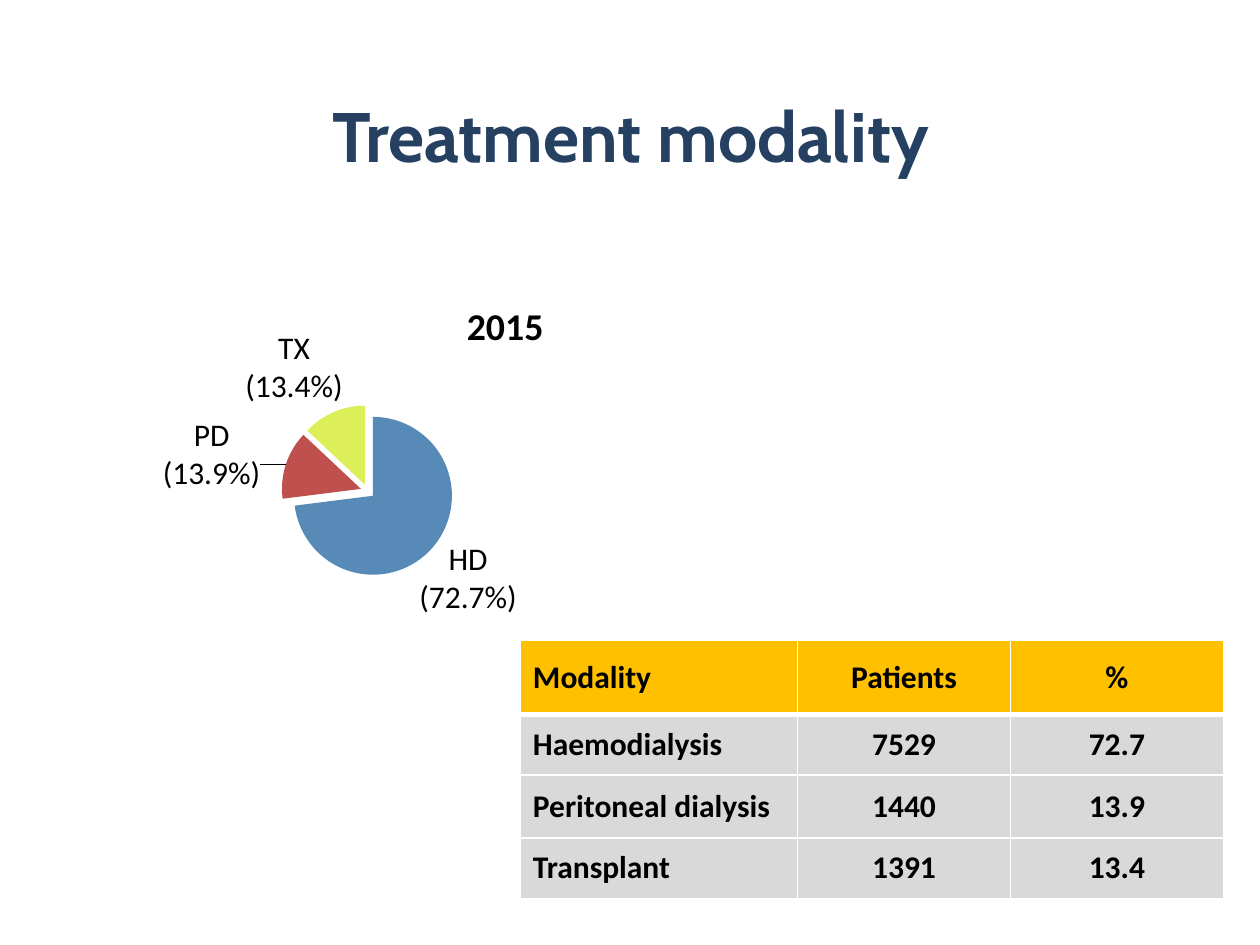
from dataclasses import dataclass

from lxml import etree
from pptx import Presentation
from pptx import util as u
from pptx.chart.data import CategoryChartData
from pptx.dml.color import RGBColor
from pptx.enum import chart as ch, text
from pptx.oxml import parse_xml
from pptx.oxml.ns import nsdecls, qn


@dataclass(frozen=True)
class Theme:
    """Colours, fonts and type sizes of the slide."""
    navy: str = "254061"
    ink: str = "000000"
    line: str = "FFFFFF"
    head: str = "FFC000"
    body: str = "D9D9D9"
    pie: tuple = ("578AB7", "C0504D", "DCEF59")
    title_font: str = "Cabin"
    font: str = "Calibri"
    title: int = 40
    label: float = 21.6
    base: int = 18


T = Theme()
LEFT, MID = text.PP_ALIGN.LEFT, text.PP_ALIGN.CENTER


def style(font, size=T.base, color=T.ink, name=T.font, bold=False):
    """Set size, colour, face and weight of a font."""
    font.size, font.name, font.bold = u.Pt(size), name, bold
    font.color.rgb = RGBColor.from_string(color)


def write(frame, words, align=LEFT, **look):
    """Put one formatted line of text in a frame."""
    para = frame.paragraphs[0]
    para.alignment = align
    run = para.add_run()
    run.text = words
    style(run.font, **look)


def layout(node, after="c:tx", edge=True, **parts):
    """Place a chart part by fractions of the chart's size."""
    spot = node.find(qn("c:layout"))
    if spot is None:
        spot = parse_xml(f"<c:layout {nsdecls('c')}/>")
        first = node.find(qn(after))
        node.insert(0 if first is None else node.index(first) + 1, spot)
    hand = etree.SubElement(spot, qn("c:manualLayout"))
    if "w" in parts:
        etree.SubElement(hand, qn("c:layoutTarget")).set("val", "inner")
    for key in ("x", "y") if edge else ():
        etree.SubElement(hand, qn(f"c:{key}Mode")).set("val", "edge")
    for key, val in parts.items():
        etree.SubElement(hand, qn(f"c:{key}")).set("val", str(val))


def border(cell, **sides):
    """Draw the named cell sides in the given point widths."""
    props = cell._tc.get_or_add_tcPr()
    for spot, (side, width) in enumerate(sides.items()):
        props.insert(spot, parse_xml(
            f'<a:ln{side} {nsdecls("a")} w="{u.Pt(width)}"><a:solidFill>'
            f'<a:srgbClr val="{T.line}"/></a:solidFill></a:ln{side}>'))


def add_title(slide, box, words):
    """Add the slide title centred in its box."""
    frame = slide.shapes.add_textbox(*map(u.Inches, box)).text_frame
    frame.word_wrap = True
    frame.vertical_anchor = text.MSO_ANCHOR.MIDDLE
    write(frame, words, MID, size=T.title, color=T.navy,
          name=T.title_font, bold=True)


def add_label(point, shift):
    """Show the category beside a slice, shifted from its usual place."""
    label = point.data_label
    style(label.font)
    label.position = ch.XL_LABEL_POSITION.OUTSIDE_END
    node = label._dLbl
    for key, val in (("showVal", "0"), ("showCatName", "1"),
                     ("showPercent", "0")):
        node.find(qn(f"c:{key}")).set("val", val)
    layout(node, after="c:idx", edge=False, x=shift[0], y=shift[1])


def add_pie(slide, box, name, shares, shifts):
    """Add the exploded pie with a category label at each slice."""
    data = CategoryChartData()
    data.categories = list(shares)
    data.add_series(name, shares.values())
    chart = slide.shapes.add_chart(
        ch.XL_CHART_TYPE.PIE, *map(u.Inches, box), data).chart
    style(chart.font)
    chart.has_legend = False
    chart.has_title = True
    write(chart.chart_title.text_frame, name, MID, size=T.label, bold=True)
    chart.chart_title.include_in_layout = False
    layout(chart.chart_title._element, x=0.66, y=0.16)
    layout(chart._chartSpace.chart.plotArea, x=0.37, y=0.42, w=0.28, h=0.41)

    plot = chart.plots[0]
    plot.vary_by_categories = True
    series = plot.series[0]
    labels = series.data_labels
    labels.show_category_name = True
    labels.show_value = labels.show_percentage = False
    labels.position = ch.XL_LABEL_POSITION.OUTSIDE_END
    style(labels.font)
    for spot, (color, shift) in enumerate(zip(T.pie, shifts)):
        point = series.points[spot]
        point.format.fill.solid()
        point.format.fill.fore_color.rgb = RGBColor.from_string(color)
        add_label(point, shift)
    burst = parse_xml(f'<c:explosion {nsdecls("c")} val="9"/>')
    series._element.find(qn("c:dPt")).addprevious(burst)


def add_grid(slide, box, rows, widths, heights):
    """Add the table with a coloured head row."""
    grid = slide.shapes.add_table(
        len(rows), len(widths), *map(u.Inches, box)).table
    for col, width in zip(grid.columns, widths):
        col.width = u.Inches(width)
    for row, height in zip(grid.rows, heights):
        row.height = u.Inches(height)
    for r, row in enumerate(rows):
        for c, words in enumerate(row):
            cell = grid.cell(r, c)
            cell.vertical_anchor = text.MSO_ANCHOR.MIDDLE
            cell.fill.solid()
            cell.fill.fore_color.rgb = RGBColor.from_string(
                T.body if r else T.head)
            write(cell.text_frame, words, MID if c else LEFT, bold=True)
            border(cell, L=1, R=1, T=3 if r == 1 else 1, B=1 if r else 3)


def main():
    """Build and save the slide."""
    deck = Presentation()
    deck.slide_width, deck.slide_height = u.Inches(10), u.Inches(7.5)
    slide = deck.slides.add_slide(deck.slide_layouts[6])
    add_title(slide, (1.06, 0.44, 7.89, 1.25), "Treatment modality")
    add_pie(slide, (0.43, 1.78, 4.88, 3.39), "2015",
            {"HD (72.7%)": 73, "PD (13.9%)": 14, "TX (13.4%)": 13},
            ((-0.03, -0.03), (-0.03, 0.07), (0.02, 0)))
    add_grid(slide, (4.13, 5.08, 5.59, 2.06),
             [("Modality", "Patients", "%"),
              ("Haemodialysis", "7529", "72.7"),
              ("Peritoneal dialysis", "1440", "13.9"),
              ("Transplant", "1391", "13.4")],
             (2.2, 1.69, 1.69), (0.59, 0.48, 0.5, 0.48))
    deck.save("out.pptx")


if __name__ == "__main__":
    main()
